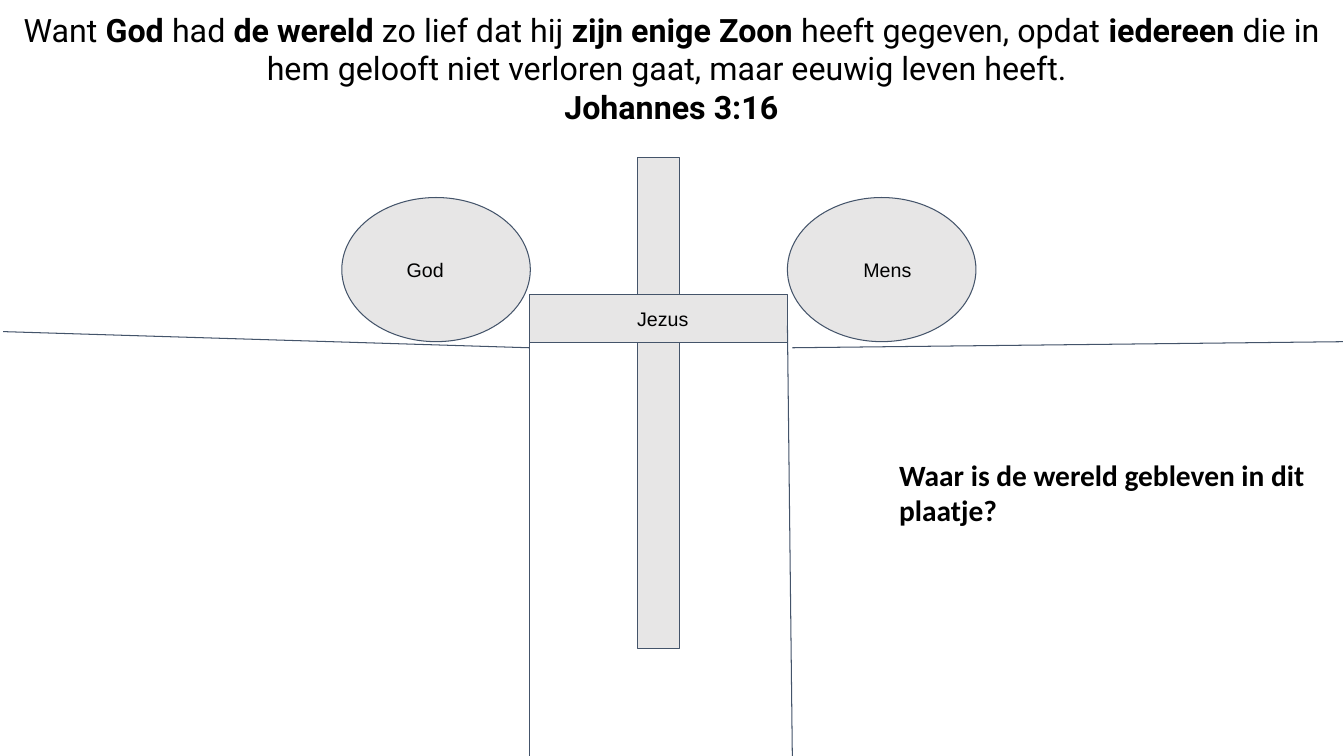
from dataclasses import dataclass

from lxml import etree
from pptx import Presentation
from pptx.dml.color import RGBColor
from pptx.enum.shapes import MSO_CONNECTOR, MSO_SHAPE
from pptx.enum.text import MSO_ANCHOR, PP_ALIGN
from pptx.oxml.ns import qn
from pptx.util import Pt

OVAL = MSO_SHAPE.OVAL
RECT = MSO_SHAPE.RECTANGLE
STRAIGHT = MSO_CONNECTOR.STRAIGHT
TOP, MIDDLE = MSO_ANCHOR.TOP, MSO_ANCHOR.MIDDLE
LEFT, CENTER = PP_ALIGN.LEFT, PP_ALIGN.CENTER
SCALE = 9144


def px(*sizes):
    return [size * SCALE for size in sizes]


@dataclass(frozen=True)
class Theme:
    ink: RGBColor = RGBColor(0, 0, 0)
    edge: RGBColor = RGBColor(0x44, 0x54, 0x6A)
    fill: RGBColor = RGBColor(0xE7, 0xE6, 0xE6)
    stroke: float = 0.75
    pad: int = 10
    label: tuple = ("Arial", 14)
    verse: tuple = ("Roboto", 23)
    query: tuple = ("Calibri", 21)


class Board:
    def __init__(self, slide, theme):
        self.shapes = slide.shapes
        self.theme = theme

    def letter(self, shape, lines, style, align=LEFT, anchor=TOP, inset=None):
        frame = shape.text_frame
        frame.word_wrap = True
        frame.vertical_anchor = anchor
        pad = self.theme.pad
        (frame.margin_left, frame.margin_top,
         frame.margin_right, frame.margin_bottom) = px(inset or pad, pad, pad, pad)
        for i, parts in enumerate(lines):
            para = frame.add_paragraph() if i else frame.paragraphs[0]
            para.alignment = align
            para.font.name = style[0]
            para.font.size = Pt(style[1])
            para.font.color.rgb = self.theme.ink
            for words, bold in parts:
                run = para.add_run()
                run.text = words
                run.font.bold = bold

    def text(self, box, lines, style, align=LEFT):
        self.letter(self.shapes.add_textbox(*px(*box)), lines, style, align)

    def shape(self, kind, box, label=None, inset=None):
        shape = self.shapes.add_shape(kind, *px(*box))
        shape.shadow.inherit = False
        shape.fill.solid()
        shape.fill.fore_color.rgb = self.theme.fill
        self.stroke(shape.line)
        if label:
            self.letter(shape, [[(label, False)]], self.theme.label,
                        anchor=MIDDLE, inset=inset)

    def line(self, start, end):
        line = self.shapes.add_connector(STRAIGHT, *px(*start, *end))
        self.stroke(line.line)
        props = line.element.find(qn("p:spPr"))
        etree.SubElement(props, qn("a:effectLst"))

    def stroke(self, line):
        line.color.rgb = self.theme.edge
        line.width = Pt(self.theme.stroke)


def main():
    deck = Presentation()
    deck.slide_width, deck.slide_height = px(1333, 750)
    theme = Theme()
    board = Board(deck.slides.add_slide(deck.slide_layouts[6]), theme)

    for left, name, inset in ((781, "Mens", 48), (339, "God", 37)):
        board.shape(OVAL, (left, 196, 187, 143), name, inset)
    board.shape(RECT, (632, 156, 42, 487))
    board.shape(RECT, (525, 292, 256, 48), "Jezus", 107)

    for start, end in (
        ((525, 315), (525, 754)),
        ((781, 323), (786, 763)),
        ((1332, 339), (786, 345)),
        ((3, 329), (525, 345)),
    ):
        board.line(start, end)

    verse = [
        ("Want ", False), ("God", True), (" had ", False),
        ("de wereld", True), (" zo lief dat hij ", False),
        ("zijn enige Zoon", True), (" heeft gegeven, opdat", False),
        (" iedereen", True),
        (" die in hem gelooft niet verloren gaat, maar eeuwig leven heeft. ", False),
    ]
    board.text((0, 0, 1332, 136), [verse, [("Johannes 3:16", True)]],
               theme.verse, CENTER)
    board.text((882, 443, 427, 91),
               [[("Waar is de wereld gebleven in dit plaatje?", True)]],
               theme.query)
    deck.save("out.pptx")


if __name__ == "__main__":
    main()
